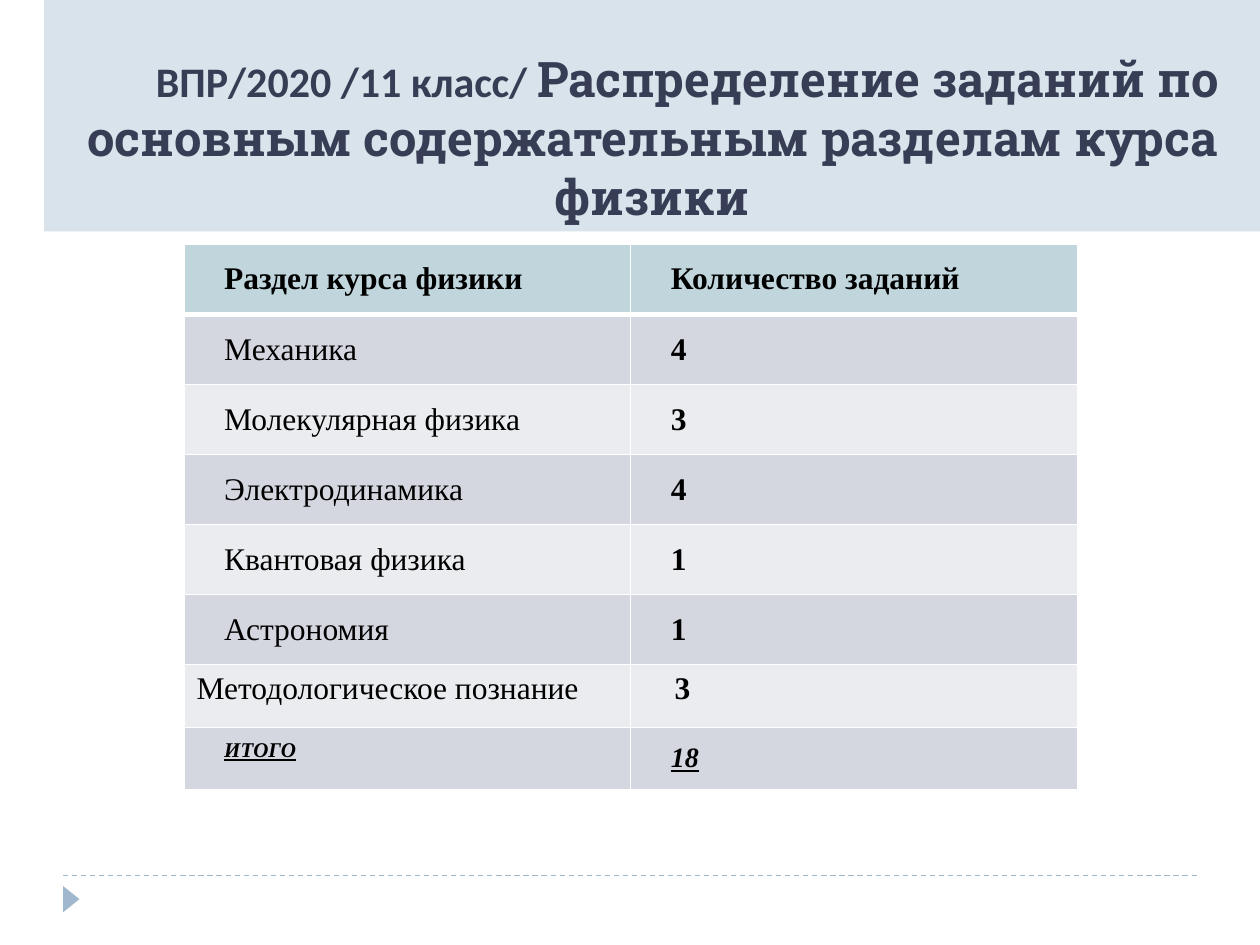
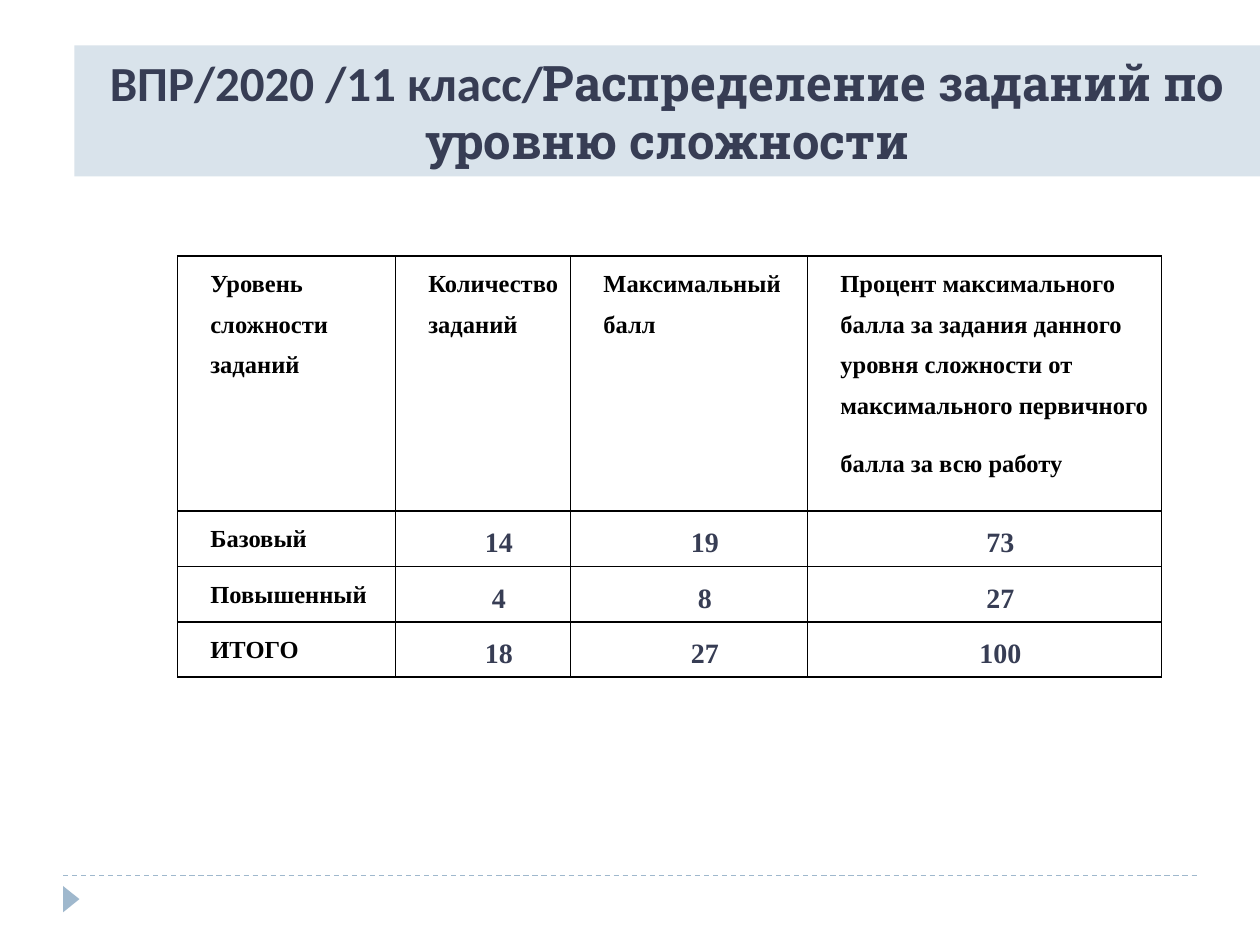
from lxml import etree
from pptx import Presentation
from pptx.dml.color import RGBColor
from pptx.enum.dml import MSO_LINE
from pptx.enum.shapes import MSO_CONNECTOR, MSO_SHAPE
from pptx.enum.text import MSO_ANCHOR, MSO_AUTO_SIZE, PP_ALIGN
from pptx.oxml.ns import qn
from pptx.util import Inches, Pt

CENTER, LEFT = PP_ALIGN.CENTER, PP_ALIGN.LEFT
MIDDLE, BOTTOM = MSO_ANCHOR.MIDDLE, MSO_ANCHOR.BOTTOM
NO_AUTOFIT = MSO_AUTO_SIZE.NONE
DASH, STRAIGHT, TRIANGLE = MSO_LINE.DASH, MSO_CONNECTOR.STRAIGHT, MSO_SHAPE.ISOSCELES_TRIANGLE

WIDTH, HEIGHT = Inches(10), Inches(7.5)
INK, BAND, ACCENT = "373D54", "D9E3EB", "9FB8CD"
BLACK, WHITE = "000000", "FFFFFF"
HEAD_FILL, ROW_FILLS = "C0D6DC", ("D5D7E0", "EBECF0")
SANS, SLAB, SERIF = "Calibri", "Roboto Slab", "Times New Roman"
INDENT = Inches(0.25)

SECTIONS = [
    ("Раздел курса физики", "Количество заданий"),
    ("Механика", "4"),
    ("Молекулярная физика", "3"),
    ("Электродинамика", "4"),
    ("Квантовая физика", "1"),
    ("Астрономия", "1"),
    ("Методологическое познание", "3"),
    ("ИТОГО", "18"),
]
LEVELS = [
    ("Уровень сложности заданий", "Количество заданий", "Максимальный балл",
     "Процент максимального балла за задания данного уровня сложности "
     "от максимального первичного\nбалла за всю работу"),
    ("Базовый", "14", "19", "73"),
    ("Повышенный", "4", "8", "27"),
    ("ИТОГО", "18", "27", "100"),
]


def rgb(color):
    """Turn a hex string into a colour."""
    return RGBColor.from_string(color)


def box(x, y, w, h):
    """Turn percentages of the slide into a left, top, width, height box."""
    return (int(WIDTH * x / 100), int(HEIGHT * y / 100),
            int(WIDTH * w / 100), int(HEIGHT * h / 100))


def set_font(font, name, size, color, bold=True):
    """Set the face, size, colour and weight of a font."""
    font.name, font.size, font.bold = name, Pt(size), bold
    font.color.rgb = rgb(color)


def add_footer(slide, area):
    """Draw the dashed rule and the pointer under it."""
    left, top, width, height = area
    line = slide.shapes.add_connector(STRAIGHT, left, top, left + width, top)
    line.line.color.rgb = rgb(ACCENT)
    line.line.width, line.line.dash_style = Pt(0.75), DASH
    etree.SubElement(line._element.spPr, qn("a:effectLst"))
    base, depth = int(height * 0.72), int(height * 0.45)
    sp = slide.shapes.add_shape(TRIANGLE, left + (depth - base) // 2,
                                top + height - (base + depth) // 2, base, depth)
    sp.rotation = 90
    sp.shadow.inherit = False
    sp.fill.solid()
    sp.fill.fore_color.rgb = rgb(ACCENT)
    sp.line.fill.background()


def add_title(slide, area, runs, anchor=MIDDLE, first_indent=0):
    """Turn the title placeholder into a band with centred runs."""
    sp = slide.shapes.title
    sp.left, sp.top, sp.width, sp.height = area
    sp.fill.solid()
    sp.fill.fore_color.rgb = rgb(BAND)
    tf = sp.text_frame
    tf.word_wrap, tf.auto_size, tf.vertical_anchor = True, NO_AUTOFIT, anchor
    p = tf.paragraphs[0]
    p.alignment = CENTER
    p._p.get_or_add_pPr().set("indent", str(first_indent))
    for text, face, size in runs:
        r = p.add_run()
        r.text = text
        set_font(r.font, face, size, INK)


def set_borders(cell, color, top=1, bottom=1):
    """Give the four sides of a cell a solid line."""
    tc_pr = cell._tc.get_or_add_tcPr()
    for side, width in (("L", 1), ("R", 1), ("T", top), ("B", bottom)):
        ln = etree.SubElement(tc_pr, qn(f"a:ln{side}"), w=str(Pt(width)))
        fill = etree.SubElement(ln, qn("a:solidFill"))
        etree.SubElement(fill, qn("a:srgbClr"), val=color)


def set_cell(cell, text, size, color=BLACK, bold=True, align=LEFT,
             margins=(0.07, 0, 0.07, 0), indent=INDENT, loose=True):
    """Write a cell's paragraphs, optionally with loose line spacing."""
    (cell.margin_left, cell.margin_top,
     cell.margin_right, cell.margin_bottom) = map(Inches, margins)
    tf = cell.text_frame
    tf.text = text
    for p in tf.paragraphs:
        p.alignment = align
        p._p.get_or_add_pPr().set("marL", str(indent))
        if loose:
            p.line_spacing, p.space_after = 1.5, Pt(10)
        set_font(p.font, SERIF, size, color, bold)


def add_grid(slide, area, cols, rows):
    """Add an unbanded table whose columns and rows share its box by weight."""
    table = slide.shapes.add_table(len(rows), len(cols), *area).table
    table.first_row = table.horz_banding = False
    for col, weight in zip(table.columns, cols):
        col.width = int(area[2] * weight / sum(cols))
    for row, weight in zip(table.rows, rows):
        row.height = int(area[3] * weight / sum(rows))
    return table


def add_sections_table(slide, area):
    """Fill the banded table of course sections."""
    table = add_grid(slide, area, [1, 1], [0.56] * 6 + [0.5] * 2)
    total = len(SECTIONS) - 1
    for i, row in enumerate(SECTIONS):
        for j, text in enumerate(row):
            cell = table.cell(i, j)
            set_borders(cell, WHITE, 3 if i == 1 else 1, 3 if i == 0 else 1)
            cell.fill.solid()
            cell.fill.fore_color.rgb = rgb(ROW_FILLS[(i - 1) % 2] if i else HEAD_FILL)
            if i == total - 1:
                set_cell(cell, text, 18, bold=j == 1, margins=(0.1, 0.05, 0.1, 0.05),
                         indent=INDENT * j, loose=False)
            elif i == total:
                set_cell(cell, text, (12, 16)[j])
                font = cell.text_frame.paragraphs[0].font
                font.italic = font.underline = True
            else:
                set_cell(cell, text, 18, bold=i == 0 or j == 1)


def add_levels_table(slide, area):
    """Fill the ruled table of difficulty levels."""
    table = add_grid(slide, area, [1.73, 1.39, 1.88, 2.81], [2.03] + [0.44] * 3)
    margins = (0.01, 0.01, 0.01, 0)
    for i, row in enumerate(LEVELS):
        for j, text in enumerate(row):
            cell = table.cell(i, j)
            set_borders(cell, BLACK)
            cell.fill.background()
            if i and j:
                set_cell(cell, text, 16, INK, align=CENTER, margins=margins)
            else:
                set_cell(cell, text, 14, margins=margins)


def new_slide(prs):
    """Add a title-only slide with the shared footer."""
    slide = prs.slides.add_slide(prs.slide_layouts[5])
    add_footer(slide, box(5, 92.67, 90, 3.87))
    return slide


def sections_slide(prs):
    """Build the slide on tasks by course section."""
    slide = new_slide(prs)
    add_title(slide, box(3.5, 0, 96.5, 24.5),
              [("ВПР/2020 /11 класс/ ", SANS, 24),
               ("Распределение заданий по основным содержательным разделам курса физики",
                SLAB, 28)],
              BOTTOM, Inches(0.56))
    add_sections_table(slide, box(14.6, 25.87, 70.9, 57.73))


def levels_slide(prs):
    """Build the slide on tasks by difficulty."""
    slide = new_slide(prs)
    add_title(slide, box(5.9, 4.8, 94.1, 13.87),
              [("ВПР/2020 /11 класс/", SANS, 28),
               ("Распределение заданий по уровню сложности", SLAB, 28)])
    add_levels_table(slide, box(14.1, 27.07, 78.1, 44.6))


def main():
    """Build and save the presentation."""
    prs = Presentation()
    prs.slide_width, prs.slide_height = WIDTH, HEIGHT
    sections_slide(prs)
    levels_slide(prs)
    prs.save("out.pptx")


if __name__ == "__main__":
    main()
